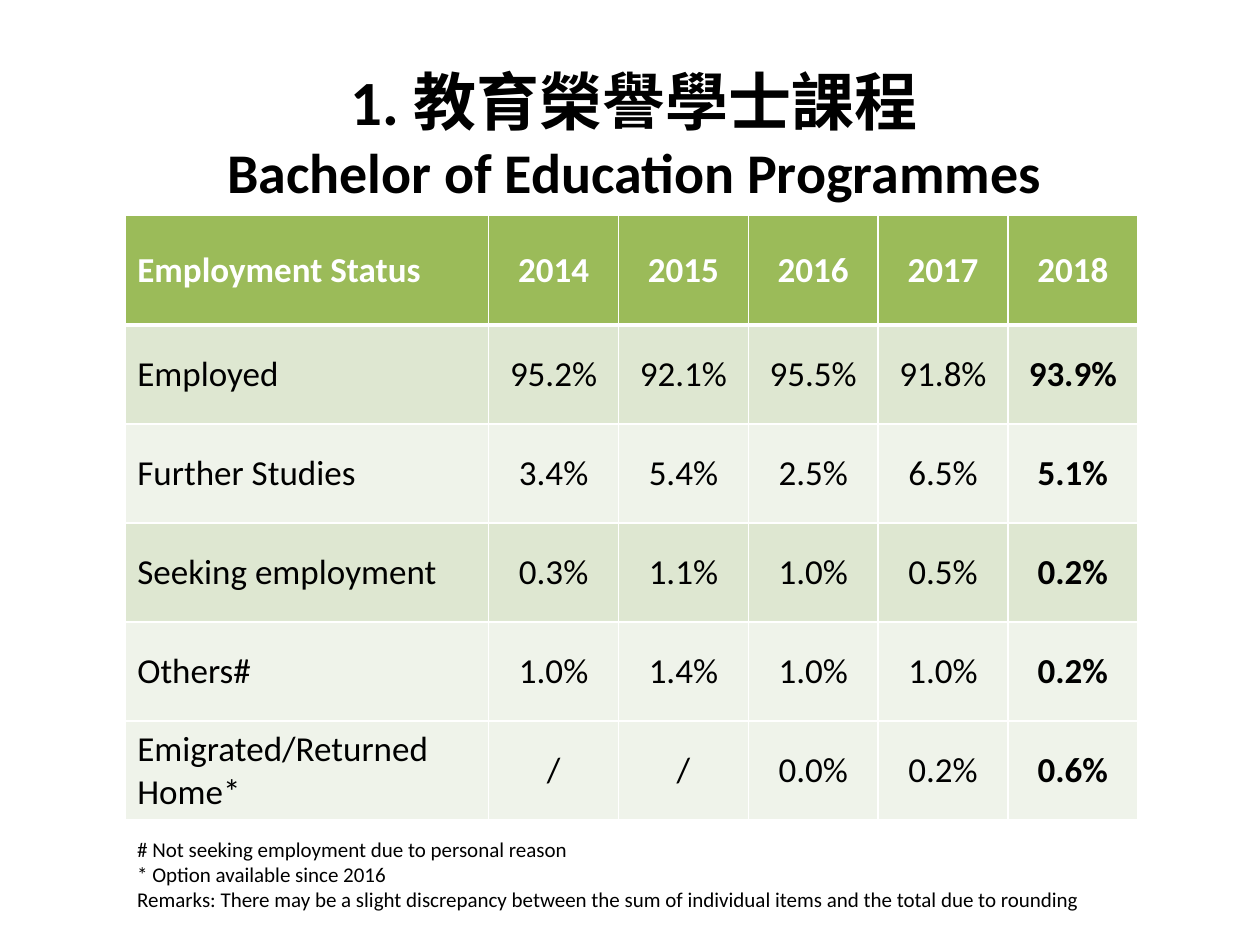
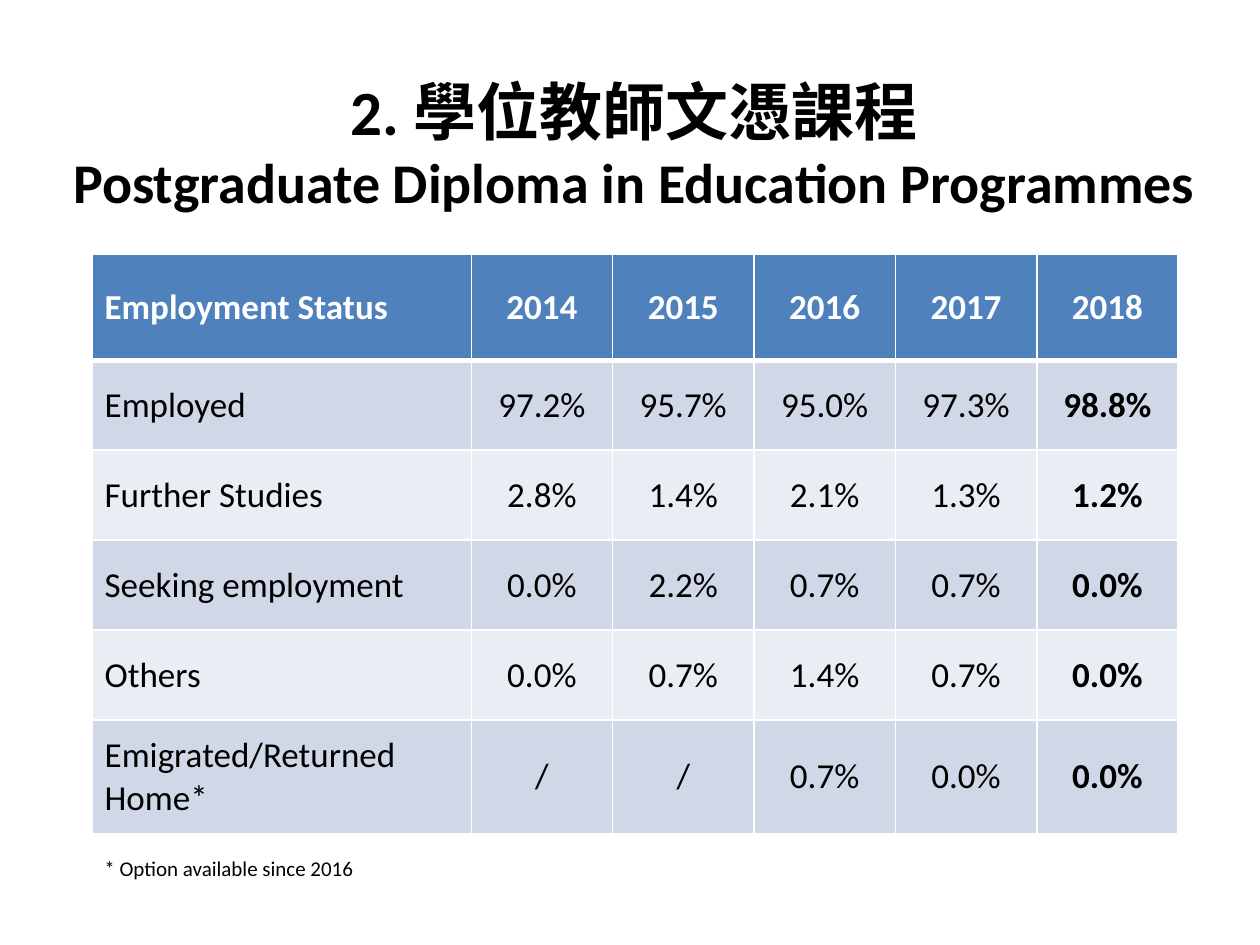
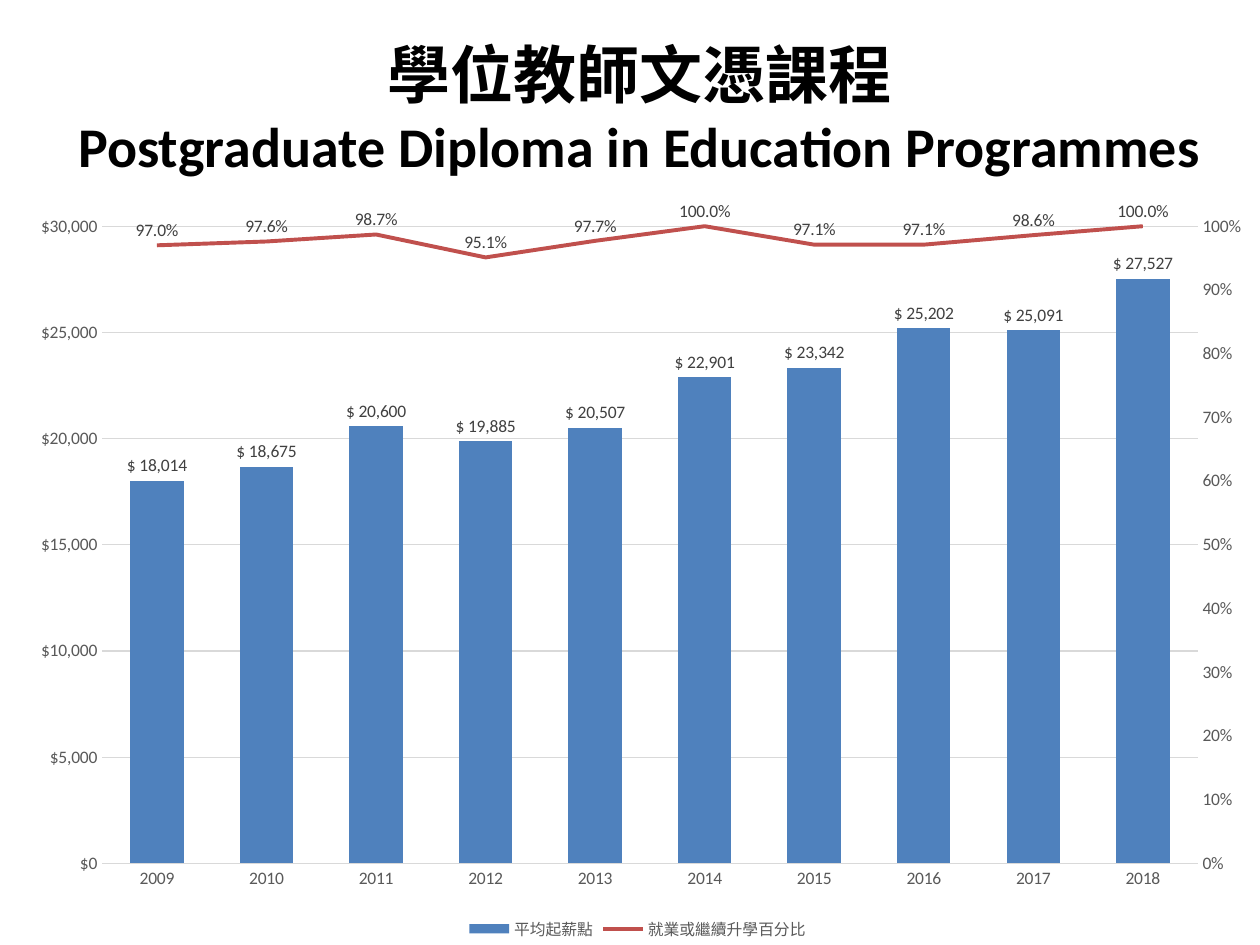
from dataclasses import dataclass

from lxml.etree import SubElement
from pptx import Presentation
from pptx.chart.data import CategoryChartData
from pptx.dml.color import RGBColor
from pptx.enum.chart import XL_CHART_TYPE, XL_LABEL_POSITION, XL_LEGEND_POSITION, XL_TICK_MARK
from pptx.enum.text import MSO_ANCHOR, PP_ALIGN
from pptx.oxml import parse_xml
from pptx.oxml.ns import nsdecls, qn
from pptx.util import Pt


@dataclass(frozen=True)
class Theme:
    font: str = "Calibri"
    text: RGBColor = RGBColor(0x00, 0x00, 0x00)
    white: RGBColor = RGBColor(0xFF, 0xFF, 0xFF)
    bar: RGBColor = RGBColor(0x4F, 0x81, 0xBD)
    line: RGBColor = RGBColor(0xC0, 0x50, 0x4D)
    axis_text: RGBColor = RGBColor(0x59, 0x59, 0x59)
    label_text: RGBColor = RGBColor(0x40, 0x40, 0x40)
    grid: RGBColor = RGBColor(0xD9, 0xD9, 0xD9)
    chinese_title: int = 36
    english_title: int = 32
    table: int = 20
    note: int = 12
    chart: int = 10
    legend: int = 9


theme = Theme()


def style_font(font, size, color, bold=False):
    font.name = theme.font
    font.size = Pt(size)
    font.color.rgb = color
    font.bold = bold


def add_title(slide, left, top, chinese, english):
    frame = slide.shapes.add_textbox(Pt(left), Pt(top), Pt(680.4), Pt(108)).text_frame
    frame.word_wrap = True
    frame.vertical_anchor = MSO_ANCHOR.MIDDLE
    paragraph = frame.paragraphs[0]
    paragraph.alignment = PP_ALIGN.CENTER
    style_font(paragraph.font, theme.chinese_title, theme.text, bold=True)
    paragraph.add_run().text = chinese
    paragraph.add_line_break()
    english_run = paragraph.add_run()
    english_run.text = english
    english_run.font.size = Pt(theme.english_title)


presentation = Presentation()
presentation.slide_width, presentation.slide_height = Pt(720), Pt(540)
blank = presentation.slide_layouts[6]

# Employment tables
header = ["Employment Status", "2014", "2015", "2016", "2017", "2018"]
employment_slides = [
    {
        "title": (22.3, 22.3, "1. 教育榮譽學士課程", "Bachelor of Education Programmes"),
        "table_at": (71.3, 123.2),
        "columns": [208] + [74.2] * 5,
        "row_heights": [62.6] + [56.6] * 5,
        "row_fills": ["9BBB59", "DEE7D1", "EFF3EA", "DEE7D1", "EFF3EA", "EFF3EA"],
        "slash_margin": 1,
        "rows": [
            ["Employed", "95.2%", "92.1%", "95.5%", "91.8%", "93.9%"],
            ["Further Studies", "3.4%", "5.4%", "2.5%", "6.5%", "5.1%"],
            ["Seeking employment", "0.3%", "1.1%", "1.0%", "0.5%", "0.2%"],
            ["Others#", "1.0%", "1.4%", "1.0%", "1.0%", "0.2%"],
            ["Emigrated/Returned Home*", "/", "/", "0.0%", "0.2%", "0.6%"],
        ],
        "notes_at": (71.3, 474.5, 558, 65.5),
        "notes": [
            "# Not seeking employment due to personal reason",
            "* Option available since 2016",
            "Remarks: There may be a slight discrepancy between the sum of "
            "individual items and the total due to rounding",
        ],
    },
    {
        "title": (22.3, 28.1, "2. 學位教師文憑課程", "Postgraduate Diploma in Education Programmes"),
        "table_at": (52.6, 145.4),
        "columns": [216.7] + [80.8] * 5,
        "row_heights": [60.5] + [51.4] * 4 + [64.8],
        "row_fills": ["4F81BD", "D0D8E8", "E9EDF4", "D0D8E8", "E9EDF4", "D0D8E8"],
        "slash_margin": 7.2,
        "rows": [
            ["Employed", "97.2%", "95.7%", "95.0%", "97.3%", "98.8%"],
            ["Further Studies", "2.8%", "1.4%", "2.1%", "1.3%", "1.2%"],
            ["Seeking employment", "0.0%", "2.2%", "0.7%", "0.7%", "0.0%"],
            ["Others", "0.0%", "0.7%", "1.4%", "0.7%", "0.0%"],
            ["Emigrated/Returned Home*", "/", "/", "0.7%", "0.0%", "0.0%"],
        ],
        "notes_at": (52.6, 485.3, 158.4, 21.6),
        "notes": ["* Option available since 2016"],
    },
]

for content in employment_slides:
    slide = presentation.slides.add_slide(blank)
    rows = [header] + content["rows"]
    left, top = content["table_at"]
    table = slide.shapes.add_table(
        len(rows), len(header), Pt(left), Pt(top),
        Pt(sum(content["columns"])), Pt(sum(content["row_heights"])),
    ).table
    for column, width in zip(table.columns, content["columns"]):
        column.width = Pt(width)
    for row, height in zip(table.rows, content["row_heights"]):
        row.height = Pt(height)

    for row_index, values in enumerate(rows):
        is_header = row_index == 0
        for column_index, value in enumerate(values):
            cell = table.cell(row_index, column_index)
            cell.text = value
            cell.vertical_anchor = MSO_ANCHOR.MIDDLE
            if value == "/":
                cell.margin_left = cell.margin_right = Pt(content["slash_margin"])
            paragraph = cell.text_frame.paragraphs[0]
            paragraph.alignment = PP_ALIGN.CENTER if column_index else PP_ALIGN.LEFT
            style_font(
                paragraph.font, theme.table, theme.white if is_header else theme.text,
                bold=is_header or column_index == len(header) - 1,
            )
            border_widths = {
                "L": 1, "R": 1, "T": 3 if row_index == 1 else 1, "B": 3 if is_header else 1,
            }
            cell_properties = cell._tc.get_or_add_tcPr()
            for side, width in border_widths.items():
                border = SubElement(cell_properties, qn(f"a:ln{side}"), w=str(Pt(width)))
                border_fill = SubElement(border, qn("a:solidFill"))
                SubElement(border_fill, qn("a:srgbClr"), val=str(theme.white))
            cell.fill.solid()
            cell.fill.fore_color.rgb = RGBColor.from_string(content["row_fills"][row_index])

    notes = slide.shapes.add_textbox(*map(Pt, content["notes_at"])).text_frame
    notes.word_wrap = False
    notes.text = "\n".join(content["notes"])
    for paragraph in notes.paragraphs:
        style_font(paragraph.font, theme.note, theme.text)
    add_title(slide, *content["title"])

# Starting salary chart
slide = presentation.slides.add_slide(blank)
add_title(slide, 25.2, 7.2, "學位教師文憑課程", "Postgraduate Diploma in Education Programmes")

chart_data = CategoryChartData()
chart_data.categories = [str(year) for year in range(2009, 2019)]
chart_data.add_series(
    "平均起薪點",
    [18014, 18675, 20600, 19885, 20507, 22901, 23342, 25202, 25091, 27527],
)
chart_data.add_series(
    "就業或繼續升學百分比",
    [0.97, 0.976, 0.987, 0.951, 0.977, 1, 0.971, 0.971, 0.986, 1],
    number_format="0.0%",
)
chart = slide.shapes.add_chart(
    XL_CHART_TYPE.COLUMN_CLUSTERED, Pt(8.6), Pt(115.2), Pt(711.4), Pt(424.8), chart_data
).chart
chart.has_title = False
style_font(chart.font, theme.chart, theme.text)
chart.has_legend = True
chart.legend.position = XL_LEGEND_POSITION.BOTTOM
chart.legend.include_in_layout = False
style_font(chart.legend.font, theme.legend, theme.axis_text)

category_axis, salary_axis = chart.category_axis, chart.value_axis
for axis in (category_axis, salary_axis):
    axis.major_tick_mark = axis.minor_tick_mark = XL_TICK_MARK.NONE
    style_font(axis.tick_labels.font, theme.chart, theme.axis_text)
salary_axis.minimum_scale, salary_axis.maximum_scale = 0, 30000
salary_axis.major_unit = 5000
salary_axis.tick_labels.number_format = "[$$-409]#,##0"
salary_axis.tick_labels.number_format_is_linked = False
salary_axis.format.line.fill.background()
salary_axis.has_major_gridlines = True
for line in (category_axis.format.line, salary_axis.major_gridlines.format.line):
    line.color.rgb = theme.grid
    line.width = Pt(0.75)

# Move the percentage series to a line plot on a second axis
plot_area = chart._chartSpace.chart.plotArea
bar_chart = plot_area.find(qn("c:barChart"))
percentage_series = bar_chart.findall(qn("c:ser"))[1]
for element in percentage_series.findall(qn("c:invertIfNegative")):
    percentage_series.remove(element)
line_chart = parse_xml(
    f'<c:lineChart {nsdecls("c")}><c:grouping val="standard"/><c:varyColors val="0"/>'
    '<c:marker val="1"/><c:axId val="5001"/><c:axId val="5002"/></c:lineChart>'
)
line_chart.insert(2, percentage_series)
bar_chart.addnext(line_chart)

percentage_axis = parse_xml(
    f'<c:valAx {nsdecls("c", "a")}><c:axId val="5002"/>'
    '<c:scaling><c:orientation val="minMax"/><c:max val="1"/><c:min val="0"/></c:scaling>'
    '<c:delete val="0"/><c:axPos val="r"/><c:numFmt formatCode="0%" sourceLinked="0"/>'
    '<c:majorTickMark val="none"/><c:minorTickMark val="none"/><c:tickLblPos val="nextTo"/>'
    '<c:spPr><a:ln><a:noFill/></a:ln></c:spPr>'
    f'<c:txPr><a:bodyPr/><a:p><a:pPr><a:defRPr sz="{theme.chart * 100}" b="0"><a:solidFill>'
    f'<a:srgbClr val="{theme.axis_text}"/></a:solidFill><a:latin typeface="{theme.font}"/>'
    '</a:defRPr></a:pPr><a:endParaRPr/></a:p></c:txPr>'
    '<c:crossAx val="5001"/><c:crosses val="max"/><c:majorUnit val="0.1"/></c:valAx>'
)
hidden_category_axis = parse_xml(
    f'<c:catAx {nsdecls("c")}><c:axId val="5001"/>'
    '<c:scaling><c:orientation val="minMax"/></c:scaling><c:delete val="1"/>'
    '<c:axPos val="b"/><c:crossAx val="5002"/><c:crosses val="autoZero"/></c:catAx>'
)
last_axis = plot_area.find(qn("c:valAx"))
last_axis.addnext(percentage_axis)
percentage_axis.addnext(hidden_category_axis)

for element in plot_area.findall(qn("c:layout")):
    plot_area.remove(element)
plot_area.insert(0, parse_xml(
    f'<c:layout {nsdecls("c")}><c:manualLayout><c:layoutTarget val="inner"/>'
    '<c:xMode val="edge"/><c:yMode val="edge"/><c:x val="0.07"/><c:y val="0.03"/>'
    '<c:w val="0.88"/><c:h val="0.86"/></c:manualLayout></c:layout>'
))

salary_plot, percentage_plot = chart.plots
salary_plot.gap_width = 105
salary_plot.overlap = -37
salary_plot.vary_by_categories = False
salary_series = salary_plot.series[0]
salary_series.format.fill.solid()
salary_series.format.fill.fore_color.rgb = theme.bar
percentage_line = percentage_plot.series[0]
percentage_line.smooth = False
percentage_line.marker.style = None
percentage_line.format.line.color.rgb = theme.line
percentage_line.format.line.width = Pt(2.25)
SubElement(percentage_line.marker._element.get_or_add_marker(), qn("c:symbol"), val="none")

for series, number_format, position in (
    (salary_series, r"[$$-380A]\ #,##0", XL_LABEL_POSITION.OUTSIDE_END),
    (percentage_line, "0.0%", XL_LABEL_POSITION.ABOVE),
):
    labels = series.data_labels
    labels.show_value = True
    labels.number_format = number_format
    labels.number_format_is_linked = False
    labels.position = position
    style_font(labels.font, theme.chart, theme.label_text)

presentation.save("out.pptx")
